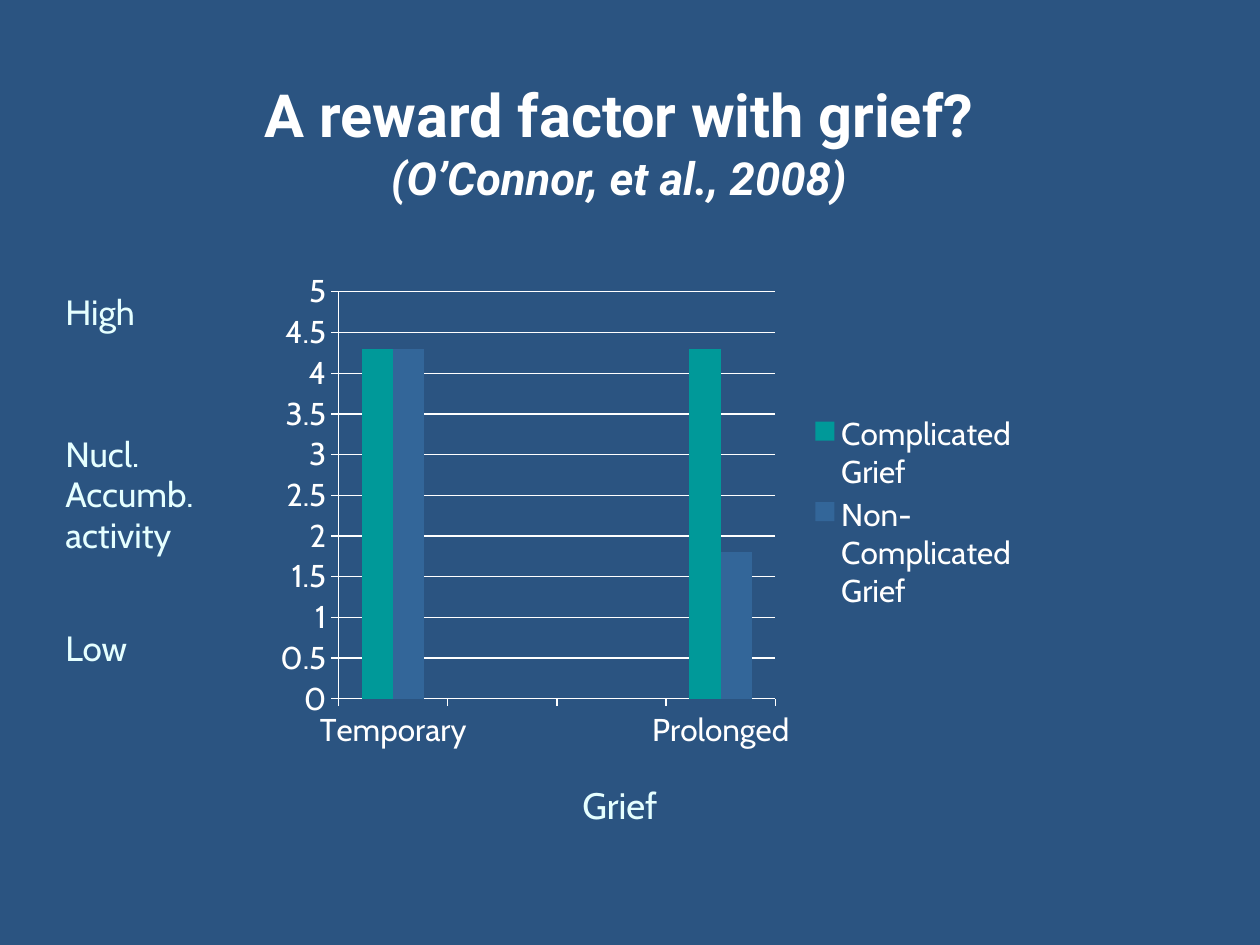
import pptx
import pptx.chart.data
import pptx.dml.color
import pptx.enum.chart
import pptx.enum.text
import pptx.oxml
import pptx.oxml.ns
import pptx.util
from pptx.util import Inches

RGBColor = pptx.dml.color.RGBColor
BACKGROUND = RGBColor(0x2B, 0x54, 0x81)
WHITE = RGBColor(0xFF, 0xFF, 0xFF)
PALE = RGBColor(0xE5, 0xFF, 0xFF)
TEAL = RGBColor(0x00, 0x99, 0x99)
BLUE = RGBColor(0x33, 0x66, 0x99)
ALIGN = pptx.enum.text.PP_ALIGN

TITLE = [("A reward factor with grief?", 34, False), ("(O’Connor, et al., 2008)", 26, True)]
LABELS = [
    (["High"], 2.5, 20, ALIGN.LEFT),
    (["Nucl.", "Accumb.", "activity"], 3.95, 20, ALIGN.LEFT),
    (["Low"], 5.17, 20, ALIGN.LEFT),
    (["Grief"], 6.42, 21, ALIGN.CENTER),
]
CATEGORIES = ["Temporary", "", "", "Prolonged"]
SERIES = [
    ("Complicated Grief", [4.3, None, None, 4.3], TEAL),
    ("Non-Complicated Grief", [4.3, None, None, 1.8], BLUE),
]
PLOT_LAYOUT = {"x": 0.1, "y": 0.06, "w": 0.57, "h": 0.82}
LEGEND_LAYOUT = {"x": 0.71, "y": 0.3, "w": 0.28, "h": 0.41}


def add_box(s, left, top, width, height):
    tf = s.shapes.add_textbox(Inches(left), Inches(top), Inches(width), Inches(height)).text_frame
    tf.word_wrap = True
    tf.vertical_anchor = pptx.enum.text.MSO_ANCHOR.MIDDLE
    return tf


def add_run(p, text, font, size, color):
    r = p.add_run()
    r.text = text
    r.font.name = font
    r.font.size = pptx.util.Pt(size)
    r.font.color.rgb = color
    return r


def set_layout(parent, index, area, inner=False):
    for old in parent.findall(pptx.oxml.ns.qn("c:layout")):
        parent.remove(old)
    target = '<c:layoutTarget val="inner"/>' if inner else ""
    modes = "".join(f'<c:{k}Mode val="edge"/>' for k in "xy")
    values = "".join(f'<c:{k} val="{v}"/>' for k, v in area.items())
    parent.insert(index, pptx.oxml.parse_xml(
        f'<c:layout {pptx.oxml.ns.nsdecls("c")}><c:manualLayout>'
        f'{target}{modes}{values}</c:manualLayout></c:layout>'))


def add_title(s):
    p = add_box(s, 0.33, 0.33, 9.17, 1.58).paragraphs[0]
    p.alignment = ALIGN.CENTER
    for i, (text, size, italic) in enumerate(TITLE):
        if i:
            p.add_line_break()
        r = add_run(p, text, "Roboto", size, WHITE)
        r.font.bold = True
        r.font.italic = italic


def add_labels(s):
    for lines, middle, size, align in LABELS:
        height = 0.4 * len(lines)
        width = 9 if align == ALIGN.CENTER else 1.6
        tf = add_box(s, 0.42, middle - height / 2, width, height)
        for i, line in enumerate(lines):
            p = tf.add_paragraph() if i else tf.paragraphs[0]
            p.alignment = align
            p.line_spacing = 0.8
            if i:
                p.space_before = pptx.util.Pt(4)
            add_run(p, line, "Cabin", size, PALE)


def add_grief_chart(s):
    data = pptx.chart.data.CategoryChartData()
    data.categories = CATEGORIES
    for name, values, _ in SERIES:
        data.add_series(name, values)
    chart = s.shapes.add_chart(
        pptx.enum.chart.XL_CHART_TYPE.COLUMN_CLUSTERED,
        Inches(2.08), Inches(2.08), Inches(6.08), Inches(3.94), data).chart
    chart.has_title = False
    chart.font.name = "Cabin"
    chart.font.size = pptx.util.Pt(18)
    chart.font.color.rgb = WHITE

    plot = chart.plots[0]
    plot.gap_width = 150
    plot.overlap = 0
    plot.vary_by_categories = False
    for series, (_, _, color) in zip(plot.series, SERIES):
        series.format.fill.solid()
        series.format.fill.fore_color.rgb = color

    value_axis = chart.value_axis
    value_axis.minimum_scale = 0
    value_axis.maximum_scale = 5
    value_axis.major_unit = 0.5
    value_axis.has_major_gridlines = True
    for axis in (chart.category_axis, value_axis):
        axis.major_tick_mark = pptx.enum.chart.XL_TICK_MARK.OUTSIDE
    for part in (chart.category_axis, value_axis, value_axis.major_gridlines):
        part.format.line.color.rgb = WHITE
        part.format.line.width = pptx.util.Pt(0.75)

    chart.has_legend = True
    chart.legend.position = pptx.enum.chart.XL_LEGEND_POSITION.RIGHT
    chart.legend.include_in_layout = False
    set_layout(chart._chartSpace.chart.plotArea, 0, PLOT_LAYOUT, inner=True)
    set_layout(chart.legend._element, 1, LEGEND_LAYOUT)


def main():
    prs = pptx.Presentation()
    prs.slide_width, prs.slide_height = Inches(10), Inches(7.5)
    s = prs.slides.add_slide(prs.slide_layouts[6])
    s.background.fill.solid()
    s.background.fill.fore_color.rgb = BACKGROUND
    add_title(s)
    add_labels(s)
    add_grief_chart(s)
    prs.save("out.pptx")


if __name__ == "__main__":
    main()
